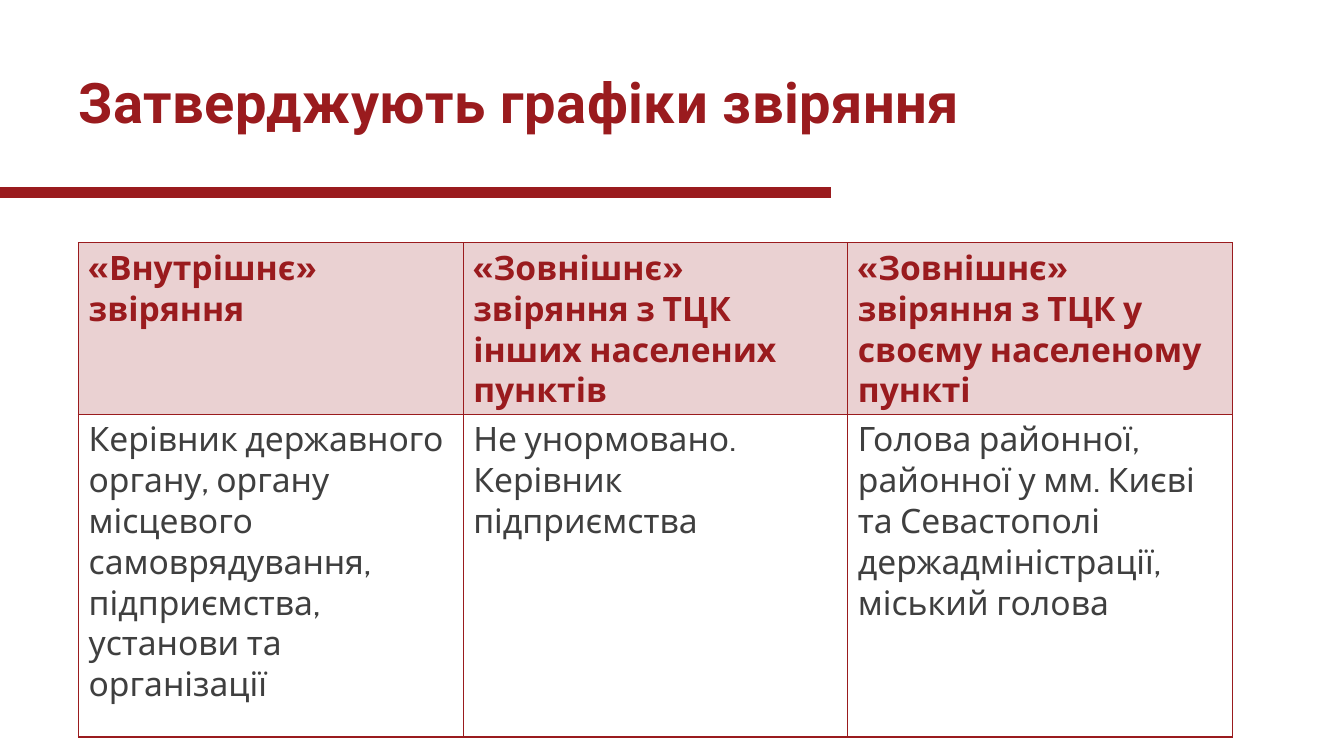
import pptx
import pptx.dml.color
import pptx.enum.text
import pptx.oxml.ns
import pptx.util
from lxml import etree

Cm = pptx.util.Cm
Pt = pptx.util.Pt

TITLE = "Затверджують графіки звіряння"
ROWS = [
    ["«Внутрішнє» звіряння",
     "«Зовнішнє» звіряння з ТЦК інших населених пунктів",
     "«Зовнішнє» звіряння з ТЦК у своєму населеному пункті"],
    ["Керівник державного органу, органу місцевого самоврядування, "
     "підприємства, установи та організації",
     "Не унормовано. Керівник підприємства",
     "Голова районної, районної у мм. Києві та Севастополі "
     "держадміністрації, міський голова"],
]
RED, GREY = "9A1B1E", "3F3F3F"
TITLE_FORMAT = {"name": "Roboto", "size": Pt(40), "bold": True}
ROW_FORMATS = [
    {"name": "Cabin", "size": Pt(24), "bold": True},
    {"name": "Cabin", "size": Pt(24), "bold": False},
]
ROW_COLORS = [RED, GREY]
ROW_HEIGHTS = [Cm(3.2), Cm(8.13)]
LEFT, CONTENT_WIDTH = Cm(1.98), Cm(29.08)
TABLE_TOP = Cm(6.12)
RULE_Y, RULE_END = Cm(4.85), Cm(20.93)


def set_color(color_format, color):
    color_format.rgb = pptx.dml.color.RGBColor.from_string(color)


def add_element(parent, tag, **attributes):
    return etree.SubElement(parent, pptx.oxml.ns.qn(tag), attributes)


def write_text(text_frame, text, font_format, color):
    paragraph = text_frame.paragraphs[0]
    run = paragraph.add_run()
    run.text = text
    for name, value in font_format.items():
        setattr(run.font, name, value)
    set_color(run.font.color, color)
    return paragraph


def add_borders(cell):
    """Draw all four borders; they must precede the fill in the cell properties."""
    properties = cell._tc.get_or_add_tcPr()
    for index, side in enumerate(("a:lnL", "a:lnR", "a:lnT", "a:lnB")):
        border = add_element(properties, side, w=str(Pt(1)))
        add_element(add_element(border, "a:solidFill"), "a:srgbClr", val=RED)
        properties.insert(index, border)


def add_title(slide):
    box = slide.shapes.add_textbox(LEFT, Cm(0.58), CONTENT_WIDTH, Cm(2.84))
    frame_format = {
        "word_wrap": True,
        "vertical_anchor": pptx.enum.text.MSO_ANCHOR.BOTTOM,
        "margin_left": 0, "margin_right": 0, "margin_top": 0, "margin_bottom": 0,
    }
    for name, value in frame_format.items():
        setattr(box.text_frame, name, value)
    paragraph = write_text(box.text_frame, TITLE, TITLE_FORMAT, RED)
    paragraph.line_spacing = 0.9
    paragraph.runs[0].font._element.set("spc", "40")


def add_rule(slide):
    rule = slide.shapes.add_connector(
        pptx.enum.shapes.MSO_CONNECTOR.STRAIGHT, 0, RULE_Y, RULE_END, RULE_Y)
    set_color(rule.line.color, RED)
    rule.line.width = Pt(8)
    add_element(rule._element.spPr, "a:effectLst")


def add_schedule_table(slide):
    table = slide.shapes.add_table(
        len(ROWS), len(ROWS[0]), LEFT, TABLE_TOP, CONTENT_WIDTH, sum(ROW_HEIGHTS)).table
    table.horz_banding = False
    for row_index, texts in enumerate(ROWS):
        table.rows[row_index].height = ROW_HEIGHTS[row_index]
        for column_index, text in enumerate(texts):
            cell = table.cell(row_index, column_index)
            write_text(cell.text_frame, text, ROW_FORMATS[row_index], ROW_COLORS[row_index])
            if row_index == 0:
                cell.fill.solid()
                set_color(cell.fill.fore_color, RED)
                fill_color = cell._tc.tcPr.find(".//" + pptx.oxml.ns.qn("a:srgbClr"))
                add_element(fill_color, "a:alpha", val="20000")
            else:
                cell.fill.background()
            add_borders(cell)


def main():
    presentation = pptx.Presentation()
    presentation.slide_width, presentation.slide_height = Cm(33.87), Cm(19.05)
    slide = presentation.slides.add_slide(presentation.slide_layouts[6])
    add_rule(slide)
    add_title(slide)
    add_schedule_table(slide)
    presentation.save("out.pptx")


if __name__ == "__main__":
    main()
